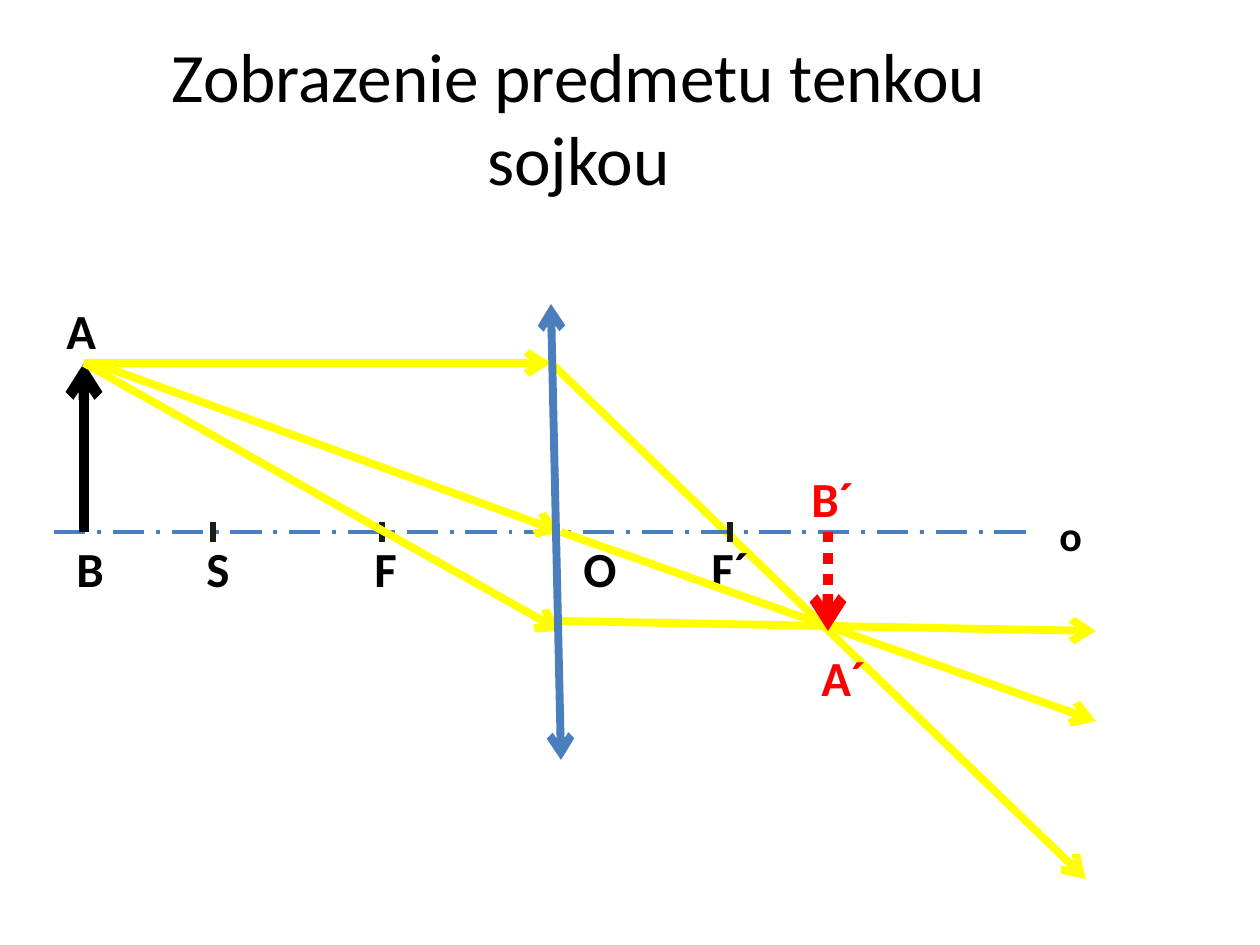
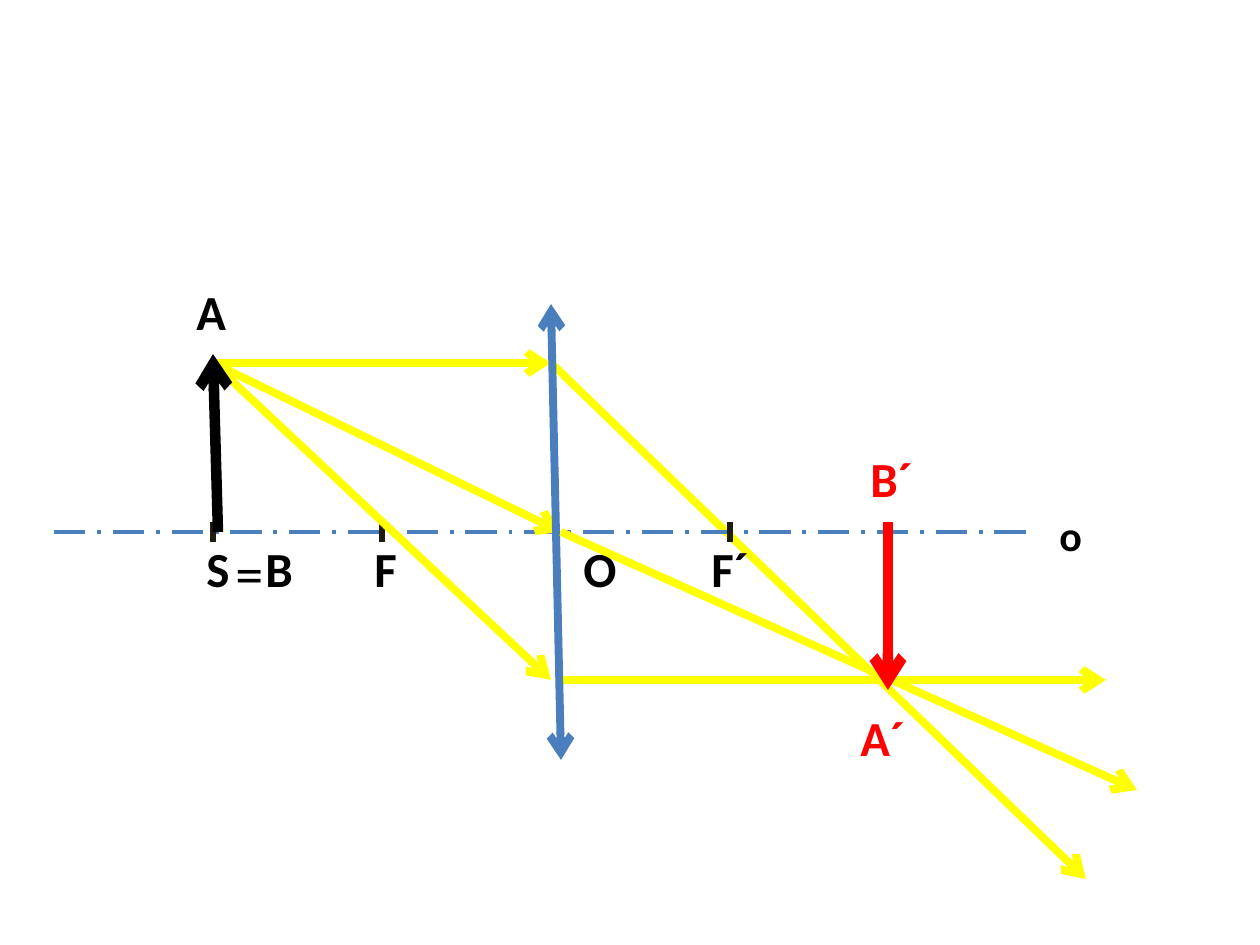
from lxml.etree import SubElement
from pptx import Presentation
from pptx.dml.color import RGBColor
from pptx.enum.dml import MSO_LINE
from pptx.enum.shapes import MSO_CONNECTOR
from pptx.enum.text import MSO_ANCHOR, MSO_AUTO_SIZE as AutoSize, PP_ALIGN
from pptx.oxml.ns import qn
from pptx.util import Pt

PX = 914400 / 126
FONT = "Calibri"
BLACK, RED, YELLOW, BLUE, TICK = "000000", "FF0000", "FFFF00", "4B7EBC", "1E1C11"
TITLE_ONLY, BLANK = 5, 6

AXIS_Y = 532
TICK_HALF = 10
TOP_RAY_Y = 363
LENS_TOP, LENS_BOTTOM = (551, 304), (561, 760)
LENS_ENTRY, LENS_CENTRE = (551, TOP_RAY_Y), (561, AXIS_Y)
CENTRE_S, FOCUS, IMAGE_FOCUS = 213, 382, 730


def px(length):
    """Turn px into EMU."""
    return round(length * PX)


def color(value):
    """Turn a hex string into a colour."""
    return RGBColor.from_string(value)


def write(frame, text, size=28, bold=True, fill=BLACK, align=PP_ALIGN.LEFT):
    """Put formatted text in a text frame."""
    paragraph = frame.paragraphs[0]
    paragraph.alignment = align
    run = paragraph.add_run()
    run.text = text
    run.font.name = FONT
    run.font.size = Pt(size)
    run.font.bold = bold
    run.font.color.rgb = color(fill)


def add_title(slide, text):
    """Place and fill the slide title."""
    title = slide.shapes.title
    title.left, title.top, title.width, title.height = map(px, (64, 37, 1029, 158))
    frame = title.text_frame
    frame.auto_size = AutoSize.NONE
    frame.vertical_anchor = MSO_ANCHOR.MIDDLE
    write(frame, text, size=39.6, bold=False, align=PP_ALIGN.CENTER)


def add_label(slide, text, left, top, width, height=72, wrap=False, **style):
    """Add the name of a point."""
    box = slide.shapes.add_textbox(px(left), px(top), px(width), px(height))
    frame = box.text_frame
    frame.word_wrap = wrap
    frame.auto_size = AutoSize.SHAPE_TO_FIT_TEXT
    write(frame, text, **style)


def add_line(slide, start, end, fill, width, dash=None, arrows=()):
    """Add a straight line with optional dashes and arrowheads."""
    connector = slide.shapes.add_connector(
        MSO_CONNECTOR.STRAIGHT, *map(px, (*start, *end)))
    connector.line.color.rgb = color(fill)
    connector.line.width = Pt(width)
    if dash is not None:
        connector.line.dash_style = dash
    properties = connector.line._get_or_add_ln()
    for arrow in arrows:
        SubElement(properties, qn(f"a:{arrow}"), type="arrow")
    SubElement(connector._element.spPr, qn("a:effectLst"))


def add_arrow(slide, start, end, fill, dash=None):
    """Add the thick arrow of the object or of its image."""
    add_line(slide, start, end, fill, 6, dash, ["tailEnd"])


def add_rays(slide, *rays):
    """Add light rays given as pairs of points."""
    for start, end in rays:
        add_line(slide, start, end, YELLOW, 4.5, arrows=["tailEnd"])


def add_bench(slide):
    """Add the optical axis, its points and the ray through the image focus."""
    add_rays(slide, (LENS_ENTRY, (1086, 879)))
    add_line(slide, (54, AXIS_Y), (1027, AXIS_Y), BLUE, 2.25, MSO_LINE.LONG_DASH_DOT)
    for x in (CENTRE_S, FOCUS, IMAGE_FOCUS):
        add_line(slide, (x, AXIS_Y - TICK_HALF), (x, AXIS_Y + TICK_HALF), TICK, 3)
    for text, left, width in (("S", 194, 49), ("F", 362, 48), ("F´", 699, 63)):
        add_label(slide, text, left, AXIS_Y, width)
    add_label(slide, "O", 571, AXIS_Y, 59, wrap=True)
    add_label(slide, "o", 1047, 503, 48, 63, wrap=True, size=24)


def add_lens(slide):
    """Add the thin converging lens."""
    add_line(slide, LENS_TOP, LENS_BOTTOM, BLUE, 4.5, arrows=["headEnd", "tailEnd"])


def add_distant_object(presentation):
    """Build the slide with the object beyond S."""
    slide = presentation.slides.add_slide(presentation.slide_layouts[TITLE_ONLY])
    add_title(slide, "Zobrazenie predmetu tenkou sojkou")
    add_bench(slide)
    tip = (84, TOP_RAY_Y)
    add_arrow(slide, (84, AXIS_Y), tip, BLACK)
    add_rays(slide,
             (tip, LENS_ENTRY),
             ((94, TOP_RAY_Y), LENS_CENTRE), (LENS_CENTRE, (1096, 721)),
             (tip, (561, 631)), ((561, 621), (1096, 631)))
    add_arrow(slide, (828, AXIS_Y), (828, 631), RED, MSO_LINE.ROUND_DOT)
    add_label(slide, "A", 54, 294, 55)
    add_label(slide, "B", 64, AXIS_Y, 53)
    add_label(slide, "B´", 799, 462, 68, fill=RED)
    add_label(slide, "A´", 809, 641, 71, fill=RED)
    add_lens(slide)


def add_object_at_centre(presentation):
    """Build the slide with the object at S."""
    slide = presentation.slides.add_slide(presentation.slide_layouts[BLANK])
    add_bench(slide)
    tip = (CENTRE_S, TOP_RAY_Y)
    add_rays(slide,
             (tip, LENS_ENTRY),
             (tip, (551, 680)), ((561, 680), (1106, 680)),
             (tip, LENS_CENTRE))
    add_lens(slide)
    add_rays(slide, (LENS_CENTRE, (1137, 790)))
    add_arrow(slide, (888, 522), (888, 690), RED)
    add_arrow(slide, (218, AXIS_Y), (CENTRE_S, 354), BLACK)
    add_label(slide, "A", 184, 275, 55, wrap=True)
    add_label(slide, "=", 223, AXIS_Y, 59, 81, wrap=True, size=32, bold=False)
    add_label(slide, "B", 253, AXIS_Y, 53, wrap=True)
    add_label(slide, "B´", 858, 442, 68, fill=RED)
    add_label(slide, "A´", 848, 701, 71, fill=RED)


def main():
    """Build and save the presentation."""
    presentation = Presentation()
    presentation.slide_width, presentation.slide_height = px(1260), px(945)
    add_distant_object(presentation)
    add_object_at_centre(presentation)
    presentation.save("out.pptx")


if __name__ == "__main__":
    main()
